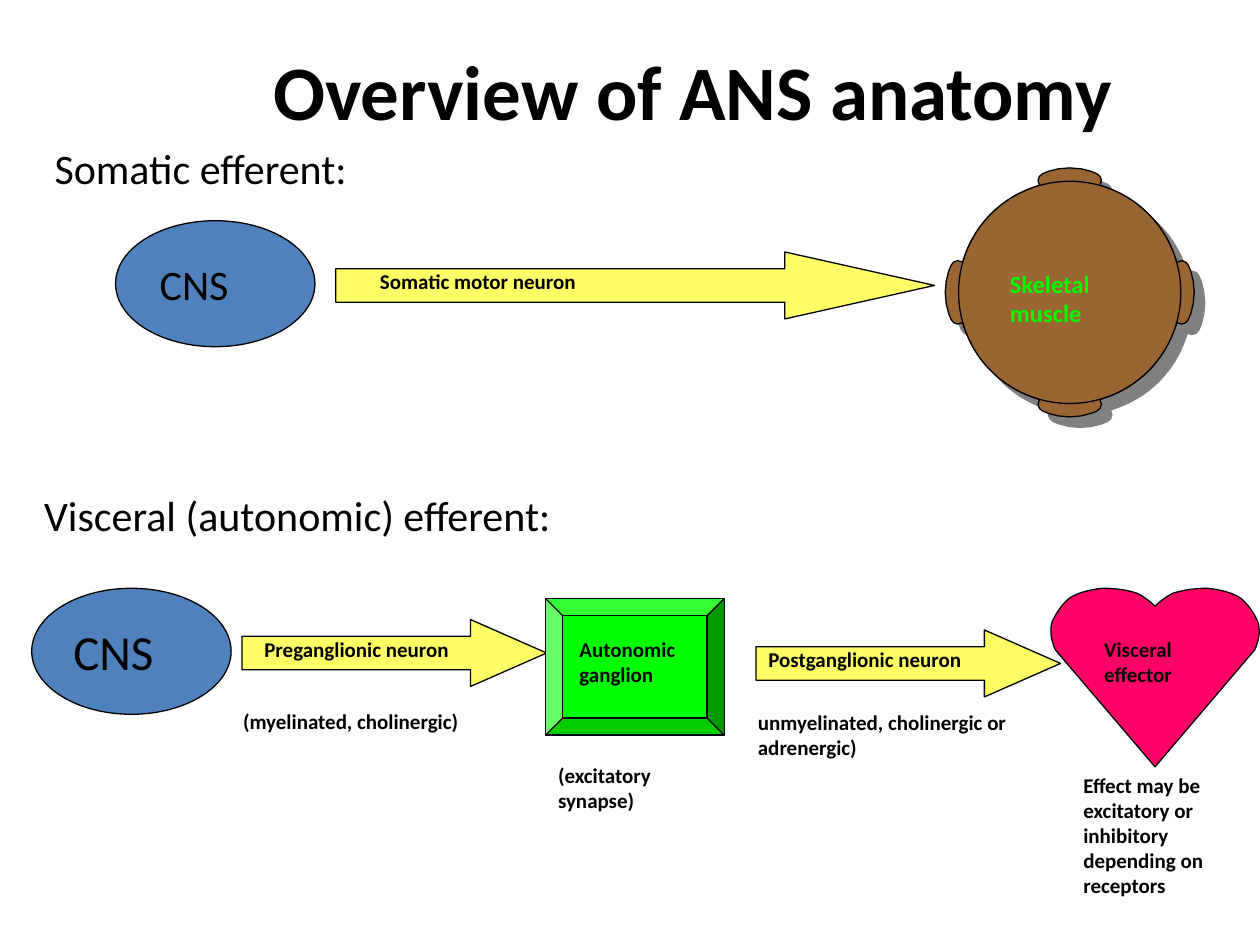
from math import cos, radians, sin

from lxml import etree
from pptx import Presentation
from pptx.dml.color import RGBColor
from pptx.enum.shapes import MSO_SHAPE
from pptx.enum.text import MSO_ANCHOR, PP_ALIGN
from pptx.oxml.ns import qn
from pptx.util import Cm, Pt

ELLIPSE, ARROW, BEVEL = MSO_SHAPE.OVAL, MSO_SHAPE.RIGHT_ARROW, MSO_SHAPE.BEVEL
TOP, MIDDLE = MSO_ANCHOR.TOP, MSO_ANCHOR.MIDDLE
LEFT, CENTER = PP_ALIGN.LEFT, PP_ALIGN.CENTER

BLACK, BLUE, YELLOW, GREEN = "000000", "4F81BD", "FFFF66", "00FF00"
BROWN, PINK, GREY = "996633", "FF0066", "808080"

TITLE = {"size": Pt(44), "bold": True}
HEADING = {"size": Pt(24), "bold": False}
CNS_LARGE = {"size": Pt(28), "bold": False}
MUSCLE = {"size": Pt(14), "bold": True}
LABEL = {"size": Pt(12), "bold": True}

CNS_SIZE = (4.02, 2.54)
ARROW_HEIGHT = 1.35


def rgb(color):
    return RGBColor.from_string(color)


def write(frame, text, style, color=BLACK, align=LEFT, anchor=TOP, wrap=True):
    frame.word_wrap = wrap
    frame.vertical_anchor = anchor
    paragraph = frame.paragraphs[0]
    paragraph.alignment = align
    run = paragraph.add_run()
    run.text = text
    for name, value in {"name": "Calibri", **style}.items():
        setattr(run.font, name, value)
    run.font.color.rgb = rgb(color)


def add_text(shapes, box, text, style, **options):
    label = shapes.add_textbox(*map(Cm, box))
    write(label.text_frame, text, style, **options)


def paint(shape, color):
    shape.shadow.inherit = False
    shape.fill.solid()
    shape.fill.fore_color.rgb = rgb(color)
    shape.line.color.rgb = rgb(BLACK)
    shape.line.width = Pt(0.75)
    return shape


def add_shape(shapes, kind, box, color, adjustments=()):
    shape = shapes.add_shape(kind, *map(Cm, box))
    for i, value in enumerate(adjustments):
        shape.adjustments[i] = value
    return paint(shape, color)


def add_neuron(shapes, x, y, width, head):
    add_shape(shapes, ARROW, (x, y, width, ARROW_HEIGHT), YELLOW, (0.5, head))


def add_outline(shapes, points, color):
    corners = [(Cm(x), Cm(y)) for x, y in points]
    builder = shapes.build_freeform(*corners[0], scale=1.0)
    builder.add_line_segments(corners[1:], close=True)
    return paint(builder.convert_to_shape(), color)


def add_drop_shadow(shape, color, distance, angle):
    effects = shape._element.spPr.find(qn("a:effectLst"))
    shadow = etree.SubElement(effects, qn("a:outerShdw"), dist=str(distance),
                              dir=str(angle * 60000), algn="ctr", rotWithShape="0")
    etree.SubElement(shadow, qn("a:srgbClr"), val=color)


def add_muscle(shapes, x, y, size):
    """A round body with one lobe on each of its four sides."""
    center, radius = size / 2, 2.24
    half_lobe = [(0.61, 2.16), (0.64, 2.26), (0.61, 2.34), (0.55, 2.39),
                 (0.43, 2.44), (0.23, 2.49), (0, 2.51)]
    side = [(-dx, -dy) for dx, dy in half_lobe]
    side += [(dx, -dy) for dx, dy in reversed(half_lobe[:-1])]
    side += [(radius * sin(radians(a)), -radius * cos(radians(a)))
             for a in range(20, 74, 4)]
    points = []
    for _ in range(4):
        points += [(x + center + dx, y + center + dy) for dx, dy in side]
        side = [(-dy, dx) for dx, dy in side]
    add_drop_shadow(add_outline(shapes, points, BROWN), GREY, Pt(8.5), 45)
    inset = center - radius
    add_shape(shapes, ELLIPSE, (x + inset, y + inset, 2 * radius, 2 * radius), BROWN)


def bezier(p0, p1, p2, p3, steps=6):
    for t in (i / steps for i in range(1, steps + 1)):
        weights = ((1 - t) ** 3, 3 * t * (1 - t) ** 2, 3 * t * t * (1 - t), t ** 3)
        yield tuple(sum(w * p[axis] for w, p in zip(weights, (p0, p1, p2, p3)))
                    for axis in (0, 1))


def add_heart(shapes, x, y, width, height):
    """One half is drawn from the notch to the tip and then mirrored."""
    controls = [(0, 0.36), (0.08, 0.28), (0.25, 0.15), (0.36, 0.1),
                (0.58, 0.03), (0.81, 0), (1.07, 0),
                (1.3, 0.03), (1.55, 0.08), (1.73, 0.2),
                (1.91, 0.36), (2.01, 0.53), (2.08, 0.69),
                (2.13, 0.89), (2.08, 1.09), (2.01, 1.24)]
    half = [controls[0]]
    for i in range(0, len(controls) - 1, 3):
        half += bezier(*controls[i:i + 4])
    middle = x + width / 2
    points = [(middle - dx, y + dy) for dx, dy in half]
    points.append((middle, y + height))
    points += [(middle + dx, y + dy) for dx, dy in reversed(half[1:])]
    add_outline(shapes, points, PINK)


def add_somatic_pathway(shapes, x, y):
    add_text(shapes, (x, y, 8.05, 1.27), "Somatic efferent:", HEADING)
    # CNS
    add_shape(shapes, ELLIPSE, (x + 1.48, y + 1.7, *CNS_SIZE), BLUE)
    add_text(shapes, (x + 2.12, y + 2.33, 2.75, 1.27), "CNS", HEADING)
    # Motor neuron
    add_neuron(shapes, x + 5.92, y + 2.33, 12.07, 2.235)
    add_text(shapes, (x + 6.56, y + 2.54, 7.19, 0.76), "Somatic motor neuron", LABEL)
    # Skeletal muscle
    add_muscle(shapes, x + 18.2, y + 0.63, 5.03)
    add_text(shapes, (x + 19.26, y + 2.54, 3.18, 1.45), "Skeletal muscle", MUSCLE,
             color=GREEN)


def add_visceral_pathway(shapes, x, y):
    add_text(shapes, (x, y, 11.86, 1.27), "Visceral (autonomic) efferent:", HEADING)
    # CNS, neurons, ganglion and effector
    cns = add_shape(shapes, ELLIPSE, (x, y + 2.12, *CNS_SIZE), BLUE)
    write(cns.text_frame, "CNS", CNS_LARGE, anchor=MIDDLE, wrap=False)
    add_neuron(shapes, x + 4.24, y + 2.75, 6.14, 1.137)
    add_shape(shapes, BEVEL, (x + 10.36, y + 2.33, 3.6, 2.75), GREEN, (0.125,))
    add_neuron(shapes, x + 14.6, y + 2.96, 6.14, 1.137)
    add_heart(shapes, x + 20.53, y + 2.12, 4.23, 3.6)
    # Names on the parts, then the remarks below them
    for dx, dy, width, height, text in (
        (4.44, 2.96, 5.72, 0.76, "Preganglionic neuron"),
        (10.79, 2.96, 2.75, 1.27, "Autonomic ganglion"),
        (14.6, 3.17, 5.11, 0.76, "Postganglionic neuron"),
        (21.37, 2.96, 2.97, 1.27, "Visceral effector"),
        (4.01, 4.41, 5.5, 0.76, "(myelinated, cholinergic)"),
        (10.36, 5.5, 3.6, 1.27, "(excitatory synapse)"),
        (14.39, 4.44, 6.35, 1.27, "unmyelinated, cholinergic or adrenergic)"),
        (20.95, 5.7, 3.39, 2.79,
         "Effect may be excitatory or inhibitory depending on receptors"),
    ):
        add_text(shapes, (x + dx, y + dy, width, height), text, LABEL)


def main():
    deck = Presentation()
    deck.slide_width, deck.slide_height = Cm(25.4), Cm(19.05)
    slide = deck.slides.add_slide(deck.slide_layouts[6])
    add_text(slide.shapes, (2.54, 0.64, 22.86, 2.34), "Overview of ANS anatomy", TITLE,
             align=CENTER, anchor=MIDDLE)
    add_somatic_pathway(slide.shapes, 0.85, 2.75)
    add_visceral_pathway(slide.shapes.add_group_shape().shapes, 0.64, 9.74)
    deck.save("out.pptx")


if __name__ == "__main__":
    main()
